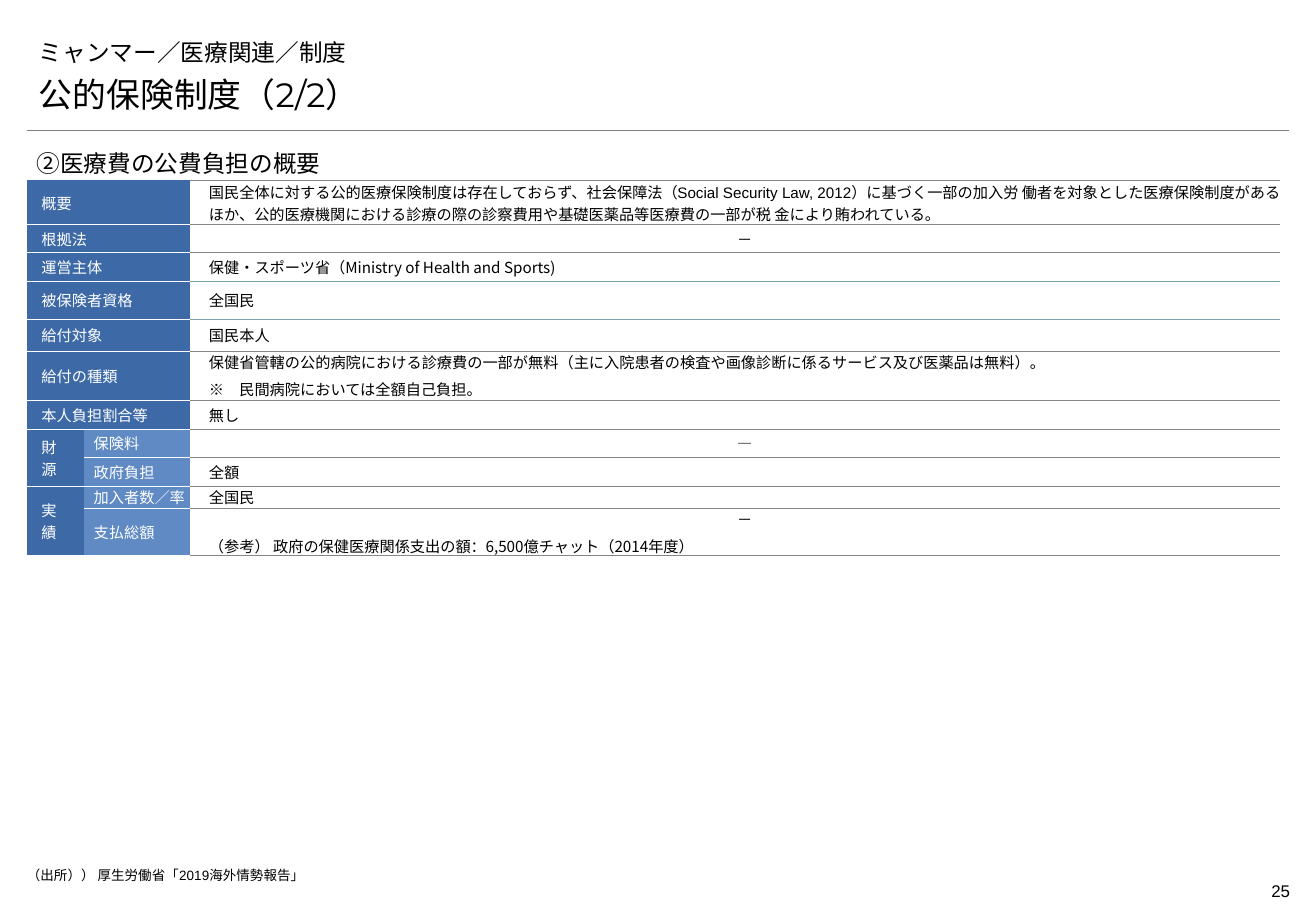
from lxml.etree import SubElement
from pptx import Presentation
from pptx.dml.color import RGBColor
from pptx.enum.shapes import MSO_CONNECTOR
from pptx.enum.text import MSO_ANCHOR, PP_ALIGN
from pptx.oxml.ns import qn
from pptx.util import Pt

LEFT, MID, RIGHT, JUST = PP_ALIGN.LEFT, PP_ALIGN.CENTER, PP_ALIGN.RIGHT, PP_ALIGN.JUSTIFY
SANS, HEAD, BODY = "Noto Sans CJK JP", "Montserrat", "Arial"
BLACK, WHITE, DARK, LIGHT = "000000", "FFFFFF", "3D6AA7", "5F8AC3"
GREY, TEAL = "868686", "79A2B3"


def color(code):
    return RGBColor.from_string(code)


def write(frame, lines, size, font, code, gap=0):
    """Fill a text frame with (text, alignment) lines."""
    frame.word_wrap = True
    for i, (text, align) in enumerate(lines):
        para = frame.add_paragraph() if i else frame.paragraphs[0]
        para.alignment = align
        if i and gap:
            para.space_before = Pt(gap)
        run = para.add_run()
        run.text = text
        run.font.size = Pt(size)
        run.font.name = font
        run.font.color.rgb = color(code)
        east = SubElement(run.font._element, qn("a:ea"))
        east.set("typeface", SANS)


deck = Presentation()
deck.slide_width, deck.slide_height = Pt(780), Pt(540)
slide = deck.slides.add_slide(deck.slide_layouts[6])

# Rule under the title
rule = slide.shapes.add_connector(MSO_CONNECTOR.STRAIGHT, Pt(16), Pt(77.2), Pt(764), Pt(77.2))
rule.line.color.rgb = color("7F7F7F")
rule.line.width = Pt(0.25)
SubElement(rule._element.spPr, qn("a:effectLst"))

# Titles, source and page number: place, insets, anchor, text
LOW, TOP = MSO_ANCHOR.BOTTOM, MSO_ANCHOR.TOP
boxes = [
    ((16, 15, 748, 28), (7.2, 3.6, 7.2, 3.6), LOW, "ミャンマー／医療関連／制度", 14, HEAD, LEFT),
    ((16, 43, 748, 28), (7.2, 3.6, 7.2, 3.6), LOW, "公的保険制度（2/2）", 20, HEAD, LEFT),
    ((21.6, 88.5, 635, 22.4), (0, 3.6, 0, 5.8), LOW, "②医療費の公費負担の概要", 14, HEAD, LEFT),
    ((16, 514, 714, 11.5), (0, 0, 0, 0), TOP, "（出所）） 厚生労働省「2019海外情勢報告」", 8, BODY, LEFT),
    ((708, 518.4, 56.6, 19.4), (0, 3.6, 0, 3.6), TOP, "25", 10, BODY, RIGHT),
]
for place, pad, anchor, text, size, font, align in boxes:
    frame = slide.shapes.add_textbox(*[Pt(v) for v in place]).text_frame
    frame.margin_left, frame.margin_top, frame.margin_right, frame.margin_bottom = [Pt(v) for v in pad]
    frame.vertical_anchor = anchor
    write(frame, [(text, align)], size, font, BLACK)

# Table rows: height, group label, sub label, value lines
rows = [
    (26.1, "概要", "", [("国民全体に対する公的医療保険制度は存在しておらず、社会保障法（Social Security Law, 2012）に基づく一部の加入労 働者を対象とした医療保険制度があるほか、公的医療機関における診療の際の診察費用や基礎医薬品等医療費の一部が税 金により賄われている。", LEFT)]),
    (16.6, "根拠法", "", [("－", MID)]),
    (17.2, "運営主体", "", [("保健・スポーツ省（Ministry of Health and Sports)", LEFT)]),
    (22.4, "被保険者資格", "", [("全国民", JUST)]),
    (18.9, "給付対象", "", [("国民本人", LEFT)]),
    (29, "給付の種類", "", [
        ("保健省管轄の公的病院における診療費の一部が無料（主に入院患者の検査や画像診断に係るサービス及び医薬品は無料）。", JUST),
        ("※　民間病院においては全額自己負担。", JUST)]),
    (17.2, "本人負担割合等", "", [("無し", JUST)]),
    (16.9, "財　源", "保険料", [("―", MID)]),
    (16.9, "", "政府負担", [("全額", LEFT)]),
    (13.1, "実　績", "加入者数／率", [("全国民", LEFT)]),
    (28, "", "支払総額", [
        ("－", MID),
        ("（参考） 政府の保健医療関係支出の額：6,500億チャット（2014年度）", LEFT)]),
]
total = sum(row[0] for row in rows)
table = slide.shapes.add_table(len(rows), 3, Pt(16), Pt(107), Pt(743), Pt(total)).table
table.first_row = table.horz_banding = False
for col, width in zip(table.columns, (33.8, 62.6, 646.6)):
    col.width = Pt(width)

edges = [TEAL if i in (3, 4) else GREY for i in range(len(rows) + 1)]
for i, (height, group, sub, value) in enumerate(rows):
    table.rows[i].height = Pt(height)
    # Merge wide labels across, group labels down
    if not sub:
        table.cell(i, 0).merge(table.cell(i, 1))
    elif group:
        table.cell(i, 0).merge(table.cell(i + 1, 0))

    label = [(group, LEFT if sub else JUST)]
    parts = [(label, DARK, 8.6, 0 if sub else 8.6), ([(sub, LEFT)], LIGHT, 5.8, 0), (value, None, 11.5, 0)]
    for j, (lines, fill, left, right) in enumerate(parts):
        cell = table.cell(i, j)
        cell.vertical_anchor = MSO_ANCHOR.MIDDLE
        cell.margin_left, cell.margin_right = Pt(left), Pt(right)
        cell.margin_top = cell.margin_bottom = 0
        if lines[0][0]:
            font = SANS if i else BODY if j == 2 else HEAD
            write(cell.text_frame, lines, 9, font, WHITE if fill else BLACK, 3)

        # Borders come before the fill in the cell properties
        if fill:
            above, below = (WHITE if i else DARK), WHITE
        else:
            above, below = edges[i], edges[i + 1]
        props = cell._tc.get_or_add_tcPr()
        for side, code in (("L", None), ("R", None), ("T", above), ("B", below)):
            line = SubElement(props, qn("a:ln" + side), w=str(Pt(0.5)))
            if code:
                SubElement(SubElement(line, qn("a:solidFill")), qn("a:srgbClr"), val=code)
            else:
                SubElement(line, qn("a:noFill"))
        if fill:
            cell.fill.solid()
            cell.fill.fore_color.rgb = color(fill)
        else:
            cell.fill.background()

deck.save("out.pptx")
